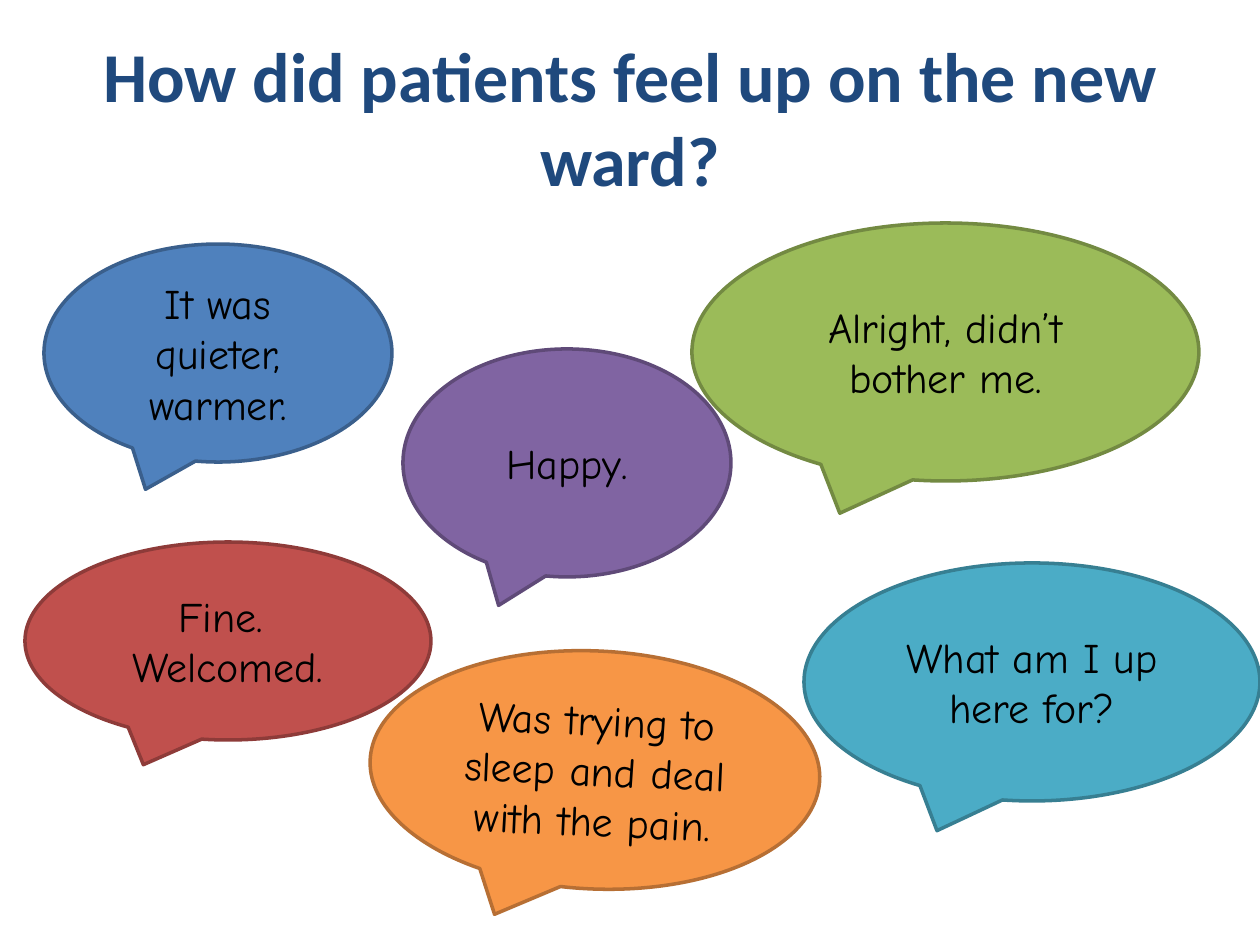
from dataclasses import dataclass

from pptx import Presentation
from pptx import util as u
from pptx.dml.color import RGBColor
from pptx.enum import shapes, text

SCALE = 914400 / 126


@dataclass(frozen=True)
class Theme:
    head: str = "Calibri"
    body: str = "Comic Neue"
    head_size: int = 40
    body_size: int = 24
    edge: int = 2
    navy: str = "1F497D"
    ink: str = "000000"
    green: tuple = ("9BBB59", "738A42")
    blue: tuple = ("4F81BD", "3A5F8C")
    red: tuple = ("C0504D", "8E3B39")
    teal: tuple = ("4BACC6", "377F92")
    plum: tuple = ("8064A2", "5F4A78")
    gold: tuple = ("F79646", "B76F34")


THEME = Theme()

BUBBLES = [
    ((692, 223, 507, 258), THEME.green, 0, "Alright, didn’t bother me."),
    ((44, 244, 348, 218), THEME.blue, 0, "It was quieter,\nwarmer."),
    ((25, 542, 406, 198), THEME.red, 0, "Fine. \nWelcomed."),
    ((804, 563, 456, 238), THEME.teal, 0, "What am I up here for?"),
    ((403, 349, 328, 228), THEME.plum, 0, "Happy."),
    ((370, 651, 450, 238), THEME.gold, 2.6,
     "Was trying to sleep and deal with the pain."),
]


def px(n):
    return u.Emu(round(n * SCALE))


def write(frame, words, face, size, ink, bold=False):
    frame.text = words
    frame.word_wrap = True
    frame.auto_size = text.MSO_AUTO_SIZE.NONE
    frame.vertical_anchor = text.MSO_ANCHOR.MIDDLE
    for para in frame.paragraphs:
        para.alignment = text.PP_ALIGN.CENTER
        font = para.font
        font.name, font.size, font.bold = face, u.Pt(size), bold
        font.color.rgb = RGBColor.from_string(ink)


def title(slide, box, words):
    head = slide.shapes.title
    head.left, head.top, head.width, head.height = map(px, box)
    write(head.text_frame, words, THEME.head, THEME.head_size, THEME.navy, True)


def bubble(slide, box, tone, turn, words):
    fill, edge = tone
    shape = slide.shapes.add_shape(
        shapes.MSO_SHAPE.OVAL_CALLOUT, *map(px, box))
    shape.rotation = turn
    shape.shadow.inherit = False
    shape.fill.solid()
    shape.fill.fore_color.rgb = RGBColor.from_string(fill)
    shape.line.color.rgb = RGBColor.from_string(edge)
    shape.line.width = u.Pt(THEME.edge)
    write(shape.text_frame, words, THEME.body, THEME.body_size, THEME.ink)


def main():
    deck = Presentation()
    deck.slide_width, deck.slide_height = px(1260), px(945)
    slide = deck.slides.add_slide(deck.slide_layouts[5])
    title(slide, (63, 38, 1134, 158),
          "How did patients feel up on the new ward?")
    for item in BUBBLES:
        bubble(slide, *item)
    deck.save("out.pptx")


if __name__ == "__main__":
    main()
